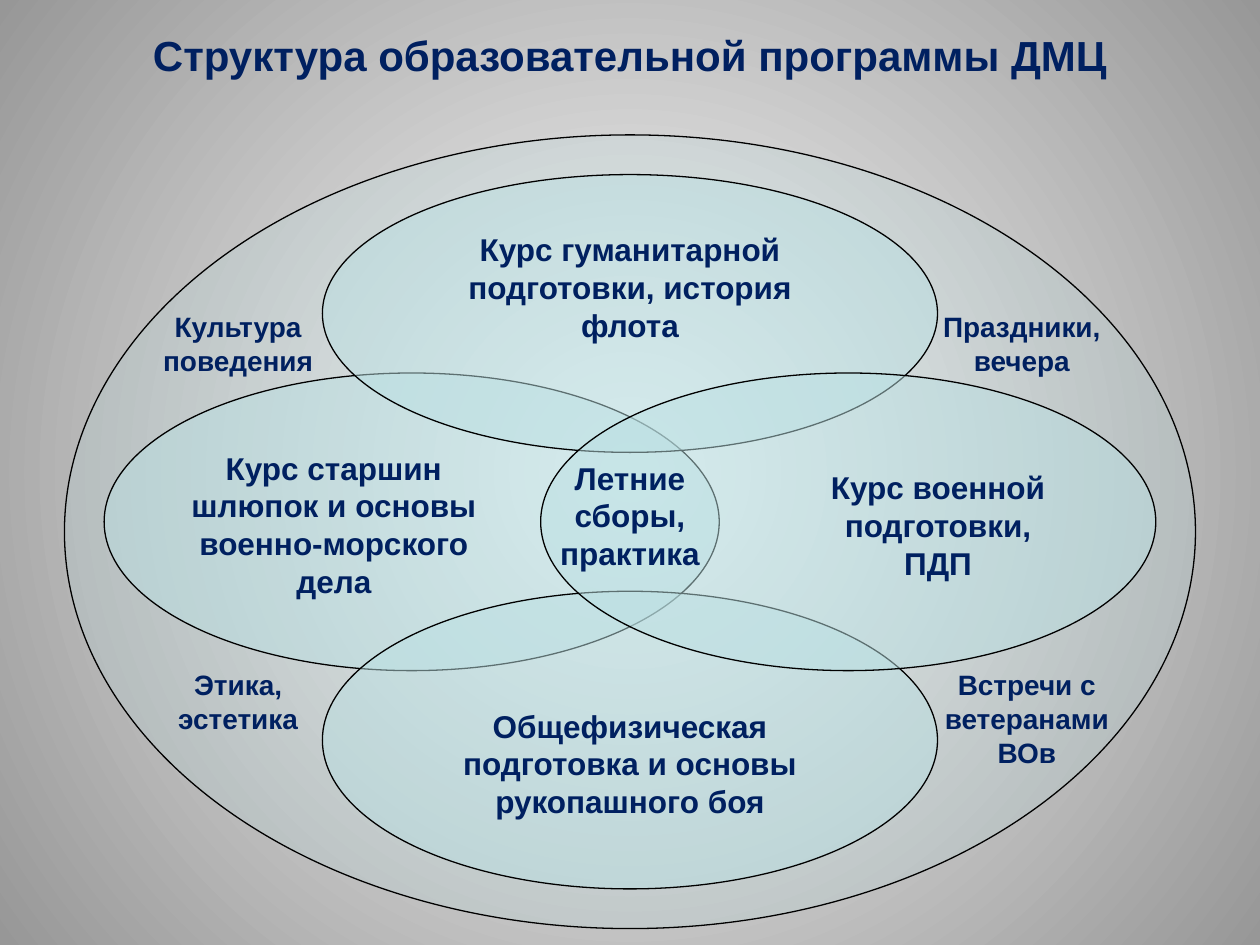
from dataclasses import dataclass

from lxml.etree import SubElement
from pptx import Presentation
from pptx.dml.color import RGBColor
from pptx.enum.shapes import MSO_SHAPE
from pptx.enum.text import MSO_ANCHOR, PP_ALIGN
from pptx.oxml.ns import qn
from pptx.util import Cm, Pt


@dataclass(frozen=True)
class Theme:
    font: str = "Arial"
    text: RGBColor = RGBColor(0x00, 0x20, 0x60)
    oval: RGBColor = RGBColor(0xBB, 0xE0, 0xE3)
    outline: RGBColor = RGBColor(0x00, 0x00, 0x00)
    background: tuple = (RGBColor(0xFF, 0xFF, 0xFF), RGBColor(0x97, 0x97, 0x97))
    title_size: int = 24
    course_size: int = 18
    activity_size: int = 16


theme = Theme()


def write_text(shape, text, size, anchor=MSO_ANCHOR.TOP):
    frame = shape.text_frame
    frame.word_wrap = True
    frame.vertical_anchor = anchor
    frame.text = text
    paragraph = frame.paragraphs[0]
    paragraph.alignment = PP_ALIGN.CENTER
    font = paragraph.runs[0].font
    font.name = theme.font
    font.size = Pt(size)
    font.bold = True
    font.color.rgb = theme.text


def add_oval(shapes, left, top, width, height, opacity):
    """Add an outlined ellipse, opacity in percent, lengths in centimetres."""
    oval = shapes.add_shape(MSO_SHAPE.OVAL, Cm(left), Cm(top), Cm(width), Cm(height))
    oval.shadow.inherit = False
    oval.fill.solid()
    oval.fill.fore_color.rgb = theme.oval
    color = oval.fill._xPr.find(qn("a:solidFill"))[0]
    SubElement(color, qn("a:alpha"), val=str(opacity * 1000))
    oval.line.color.rgb = theme.outline
    oval.line.width = Pt(0.75)


presentation = Presentation()
presentation.slide_width = Cm(25.4)
presentation.slide_height = Cm(19.05)
slide = presentation.slides.add_slide(presentation.slide_layouts[5])

# Radial background
fill = slide.background.fill
fill.gradient()
for stop, color, position in zip(fill.gradient_stops, theme.background, (0, 1)):
    stop.color.rgb = color
    stop.position = position
gradient = slide._element.find(".//" + qn("a:gradFill"))
gradient.remove(gradient.find(qn("a:lin")))
circle = SubElement(gradient, qn("a:path"), {"path": "circle"})
SubElement(circle, qn("a:fillToRect"), dict.fromkeys("ltrb", "50000"))

# Title
title = slide.shapes.title
title.left, title.top, title.width, title.height = Cm(1.27), Cm(-0.08), Cm(22.86), Cm(2.36)
write_text(title, "Структура образовательной программы ДМЦ", theme.title_size, MSO_ANCHOR.MIDDLE)

# Overlapping courses inside the whole programme
add_oval(slide.shapes, 1.3, 2.72, 22.8, 16, opacity=20)
courses = slide.shapes.add_group_shape().shapes
for left, top, height in [(2.1, 7.52, 6), (6.5, 11.92, 6), (6.5, 3.52, 5.6), (10.9, 7.52, 6)]:
    add_oval(courses, left, top, 12.4, height, opacity=50)

course_labels = [
    ("Курс старшин шлюпок и основы военно-морского дела", 3.53, 8.92, 6.4, 3.33),
    ("Курс военной подготовки, ПДП", 16.31, 9.32, 5.2, 2.55),
    ("Общефизическая подготовка и основы рукопашного боя", 8.9, 14.12, 7.6, 2.55),
    ("Курс гуманитарной подготовки, история флота", 9.1, 4.52, 7.2, 2.55),
    ("Летние сборы, практика", 10.3, 9.12, 4.8, 2.55),
]
activity_labels = [
    ("Культура поведения", 2.5, 6.12, 4.6, 1.63),
    ("Этика, эстетика", 2.5, 13.34, 4.6, 1.63),
    ("Праздники, вечера", 17.9, 6.12, 5.4, 1.63),
    ("Встречи с ветеранами ВОв", 18.3, 13.34, 4.8, 2.29),
]
for shapes, labels, size in [
    (courses, course_labels, theme.course_size),
    (slide.shapes, activity_labels, theme.activity_size),
]:
    for text, *box in labels:
        write_text(shapes.add_textbox(*map(Cm, box)), text, size)

presentation.save("out.pptx")
